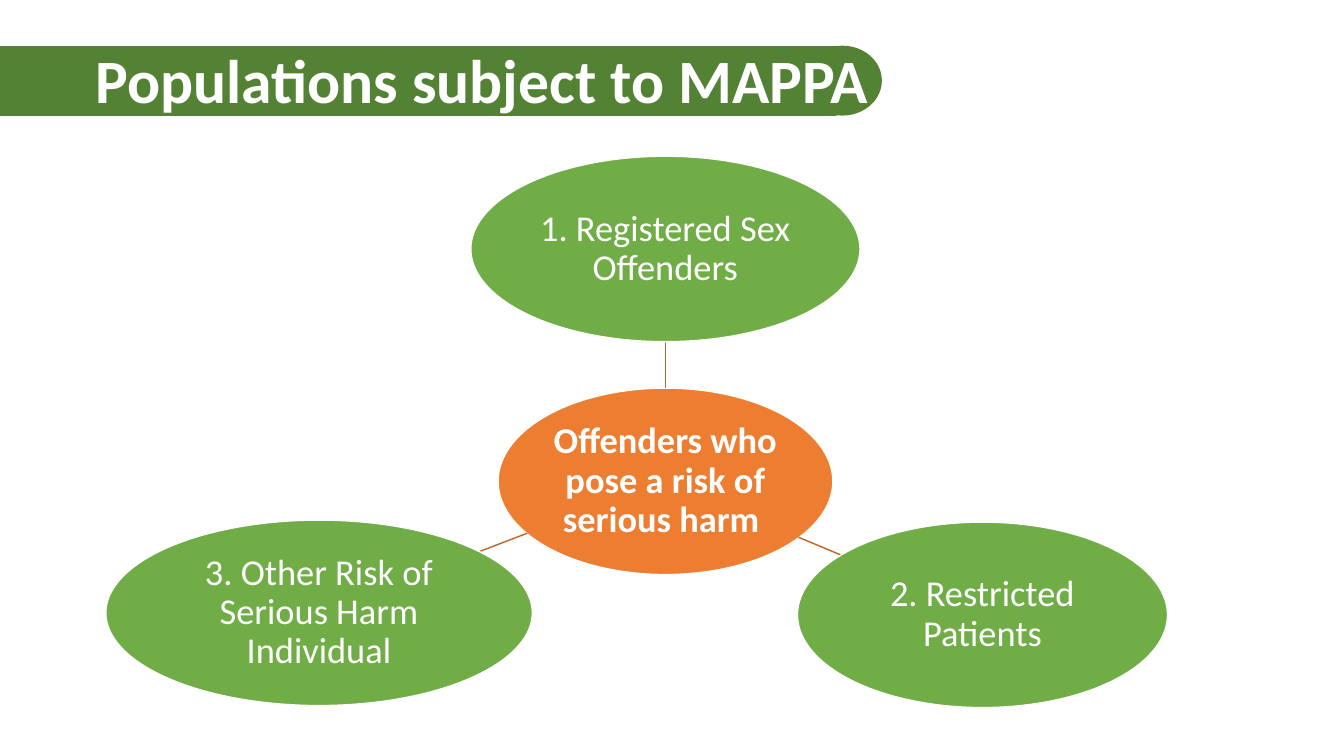
from pptx import Presentation
from pptx.dml.color import RGBColor
from pptx.enum.shapes import MSO_CONNECTOR, MSO_SHAPE
from pptx.enum.text import MSO_ANCHOR, PP_ALIGN
from pptx.oxml.ns import qn
from pptx.util import Inches, Pt
from lxml import etree

WHITE = RGBColor(0xFF, 0xFF, 0xFF)
DARK_GREEN = RGBColor(0x54, 0x82, 0x35)
GREEN = RGBColor(0x70, 0xAD, 0x47)
ORANGE = RGBColor(0xED, 0x7D, 0x31)
RUST = RGBColor(0xBE, 0x64, 0x27)


class SlideBuilder:
    """Holds the slide and its shared style."""
    font = "Calibri"
    inset = Inches(0.02)

    def __init__(self, slide):
        self.slide = slide

    def style_text(self, tf, text, size, bold, align):
        tf.word_wrap = True
        tf.vertical_anchor = MSO_ANCHOR.MIDDLE
        p = tf.paragraphs[0]
        p.text = text
        p.alignment = align
        p.line_spacing = 0.9
        p.font.name = self.font
        p.font.size = Pt(size)
        p.font.bold = bold
        p.font.color.rgb = WHITE

    def title(self, text, x, y, w, h):
        sp = self.slide.shapes.title
        sp.left, sp.top, sp.width, sp.height = map(Inches, (x, y, w, h))
        self.style_text(sp.text_frame, text, 44, True, PP_ALIGN.LEFT)

    def shape(self, kind, x, y, w, h, fill, line):
        sp = self.slide.shapes.add_shape(kind, *map(Inches, (x, y, w, h)))
        sp.shadow.inherit = False
        sp.fill.solid()
        sp.fill.fore_color.rgb = fill
        sp.line.color.rgb = line
        sp.line.width = Pt(1)
        return sp

    def oval(self, text, x, y, w, h, fill, bold=False):
        sp = self.shape(MSO_SHAPE.OVAL, x, y, w, h, fill, WHITE)
        tf = sp.text_frame
        tf.margin_left = tf.margin_right = self.inset
        tf.margin_top = tf.margin_bottom = self.inset
        self.style_text(tf, text, 26, bold, PP_ALIGN.CENTER)

    def spoke(self, x1, y1, x2, y2):
        line = self.slide.shapes.add_connector(
            MSO_CONNECTOR.STRAIGHT, *map(Inches, (x1, y1, x2, y2)))
        line.line.color.rgb = RUST
        line.line.width = Pt(1)
        etree.SubElement(line._element.spPr, qn("a:effectLst"))


def main():
    prs = Presentation()
    prs.slide_width, prs.slide_height = Inches(13.33), Inches(7.5)
    s = SlideBuilder(prs.slides.add_slide(prs.slide_layouts[5]))

    # Title banner with a rounded end, placed behind the title
    banner = [
        s.shape(MSO_SHAPE.RECTANGLE, 0, 0.46, 8.29, 0.68, DARK_GREEN, DARK_GREEN),
        s.shape(MSO_SHAPE.OVAL, 7.97, 0.46, 0.77, 0.68, DARK_GREEN, DARK_GREEN),
    ]
    title = s.slide.shapes.title._element
    for sp in banner:
        title.addprevious(sp._element)
    s.title("Populations subject to MAPPA", 0.85, 0.1, 11.5, 1.45)

    # Hub
    s.oval("Offenders who pose a risk of serious harm ",
           4.94, 3.85, 3.32, 1.85, ORANGE, bold=True)

    # Populations, each with its spoke from the hub
    populations = [
        ("1. Registered Sex Offenders", (4.67, 1.55, 3.86, 1.84), (6.6, 3.85, 6.6, 3.38)),
        ("2. Restricted Patients", (7.91, 5.18, 3.67, 1.84), (7.92, 5.33, 8.35, 5.51)),
        ("3. Other Risk of Serious Harm Individual", (1.05, 5.16, 4.23, 1.84),
         (5.23, 5.29, 4.76, 5.47)),
    ]
    for text, box, spoke in populations:
        s.spoke(*spoke)
        s.oval(text, *box, GREEN)

    prs.save("out.pptx")


if __name__ == "__main__":
    main()
